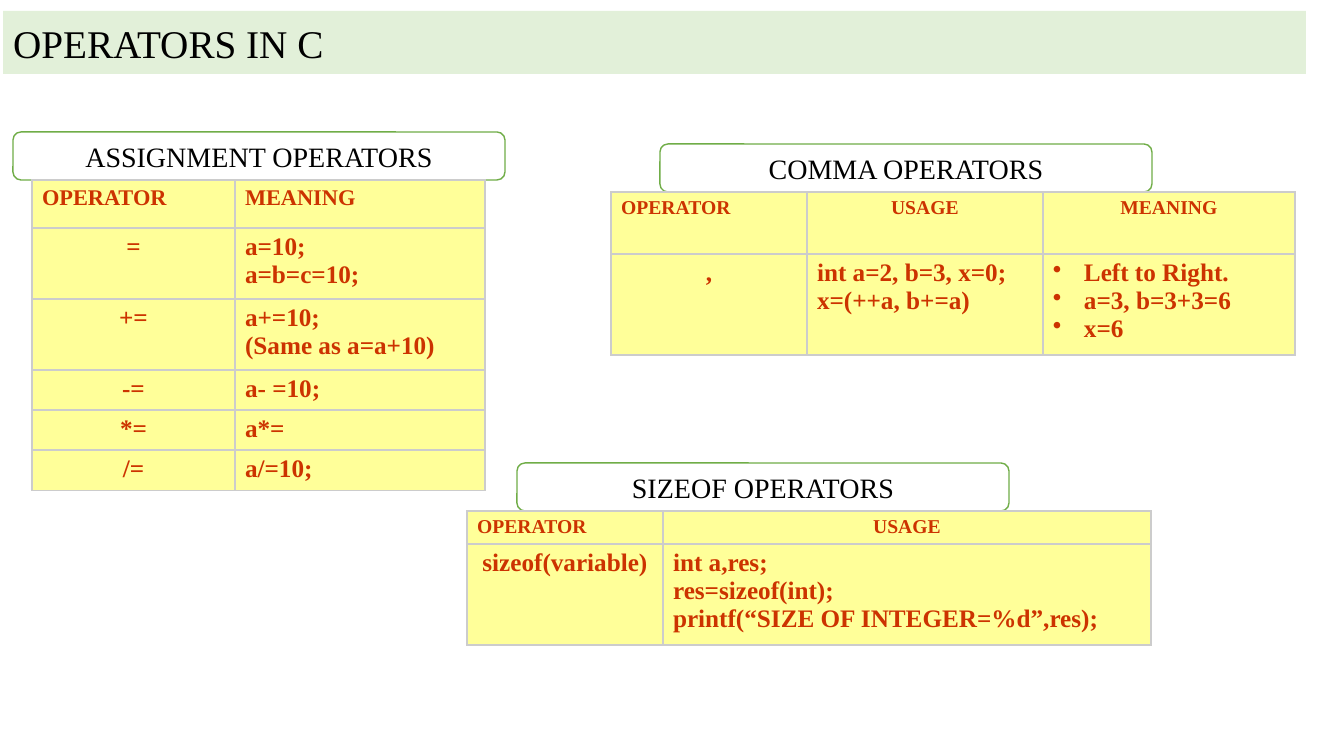
from dataclasses import dataclass

from lxml import etree
from pptx import Presentation, util as u
from pptx.dml.color import RGBColor
from pptx.enum import shapes, text
from pptx.oxml import ns

ALIGN = {
    "l": text.PP_ALIGN.LEFT,
    "c": text.PP_ALIGN.CENTER,
    "j": text.PP_ALIGN.JUSTIFY,
}


@dataclass(frozen=True)
class Theme:
    face: str = "Times New Roman"
    ink: str = "000000"
    band: str = "E2F0D9"
    edge: str = "70AD47"
    cell: str = "FFFF99"
    rule: str = "CCCCCC"
    word: str = "CC3300"
    title: int = 28
    label: int = 20
    body: int = 18


@dataclass(frozen=True)
class Panel:
    name: str
    label: tuple[int, int]
    left: int
    cols: tuple[int, ...]
    rows: tuple[int, ...]
    size: int
    head: str
    body: str
    cells: tuple[tuple[str, ...], ...]
    bullet: int = -1


THEME = Theme()
LABEL_W, LABEL_H = 492, 48

PANELS = (
    Panel("ASSIGNMENT OPERATORS", (13, 132), 32, (203, 250),
          (48, 71, 71, 40, 40, 41), 16, "jj", "cj", (
              ("OPERATOR", "MEANING"),
              ("=", "a=10;\na=b=c=10;"),
              ("+=", "a+=10;\n(Same as a=a+10)"),
              ("-=", "a- =10;"),
              ("*=", "a*="),
              ("/=", "a/=10;"),
          )),
    Panel("COMMA OPERATORS", (660, 144), 611, (196, 236, 252),
          (62, 101), 14, "jcc", "cll", (
              ("OPERATOR", "USAGE", "MEANING"),
              (",", "int a=2, b=3, x=0;\nx=(++a, b+=a)",
               "Left to Right.\na=3, b=3+3=6\nx=6"),
          ), bullet=2),
    Panel("SIZEOF OPERATORS", (517, 463), 467, (196, 488),
          (33, 101), 14, "jc", "cj", (
              ("OPERATOR", "USAGE"),
              ("sizeof(variable)",
               "int a,res;\nres=sizeof(int);\n"
               "printf(“SIZE OF INTEGER=%d”,res);"),
          )),
)


def px(num: int) -> int:
    return u.Emu(round(num * 914400 / 100.8))


def paint(fill, tone: str) -> None:
    fill.solid()
    fill.fore_color.rgb = RGBColor.from_string(tone)


def style(para, side: str, size: int, tone: str, bold: bool = False) -> None:
    para.alignment = ALIGN[side]
    font = para.font
    font.name, font.size, font.bold = THEME.face, u.Pt(size), bold
    font.color.rgb = RGBColor.from_string(tone)


def border(cell) -> None:
    props = cell._tc.get_or_add_tcPr()
    for side in "LRTB":
        line = etree.SubElement(props, ns.qn(f"a:ln{side}"), w=str(u.Pt(1)))
        fill = etree.SubElement(line, ns.qn("a:solidFill"))
        etree.SubElement(fill, ns.qn("a:srgbClr"), val=THEME.rule)


def dot(para) -> None:
    props = para._p.get_or_add_pPr()
    step = px(31)
    props.set("marL", str(step))
    props.set("indent", str(-step))
    mark = etree.Element(ns.qn("a:buChar"), char="•")
    props.insert(0, mark)


def add_title(slide) -> None:
    title = slide.shapes.title
    title.left, title.top, title.width, title.height = map(px, (3, 11, 1303, 63))
    geom = etree.SubElement(title._element.spPr, ns.qn("a:prstGeom"),
                            prst="flowChartAlternateProcess")
    etree.SubElement(geom, ns.qn("a:avLst"))
    paint(title.fill, THEME.band)
    frame = title.text_frame
    frame.text = "OPERATORS IN C"
    frame.vertical_anchor = text.MSO_ANCHOR.MIDDLE
    style(frame.paragraphs[0], "l", THEME.title, THEME.ink)


def add_label(slide, panel: Panel) -> None:
    box = slide.shapes.add_shape(
        shapes.MSO_SHAPE.FLOWCHART_ALTERNATE_PROCESS,
        *map(px, (*panel.label, LABEL_W, LABEL_H)))
    box.shadow.inherit = False
    box.fill.background()
    box.line.color.rgb = RGBColor.from_string(THEME.edge)
    box.line.width = u.Pt(1)
    box.text_frame.text = panel.name
    style(box.text_frame.paragraphs[0], "c", THEME.label, THEME.ink)


def add_grid(slide, panel: Panel) -> None:
    top = panel.label[1] + LABEL_H
    size = (sum(panel.cols), sum(panel.rows))
    grid = slide.shapes.add_table(
        len(panel.rows), len(panel.cols),
        *map(px, (panel.left, top, *size))).table
    for col, width in zip(grid.columns, panel.cols):
        col.width = px(width)
    for row, height in zip(grid.rows, panel.rows):
        row.height = px(height)
    for r, words in enumerate(panel.cells):
        sides = panel.body if r else panel.head
        points = THEME.body if r else panel.size
        for c, word in enumerate(words):
            cell = grid.cell(r, c)
            border(cell)
            paint(cell.fill, THEME.cell)
            cell.text_frame.text = word
            for para in cell.text_frame.paragraphs:
                if r and c == panel.bullet:
                    dot(para)
                style(para, sides[c], points, THEME.word, True)


def main() -> None:
    deck = Presentation()
    deck.slide_width, deck.slide_height = px(1344), px(756)
    slide = deck.slides.add_slide(deck.slide_layouts[5])
    add_title(slide)
    for panel in PANELS:
        add_label(slide, panel)
        add_grid(slide, panel)
    deck.save("out.pptx")


if __name__ == "__main__":
    main()
